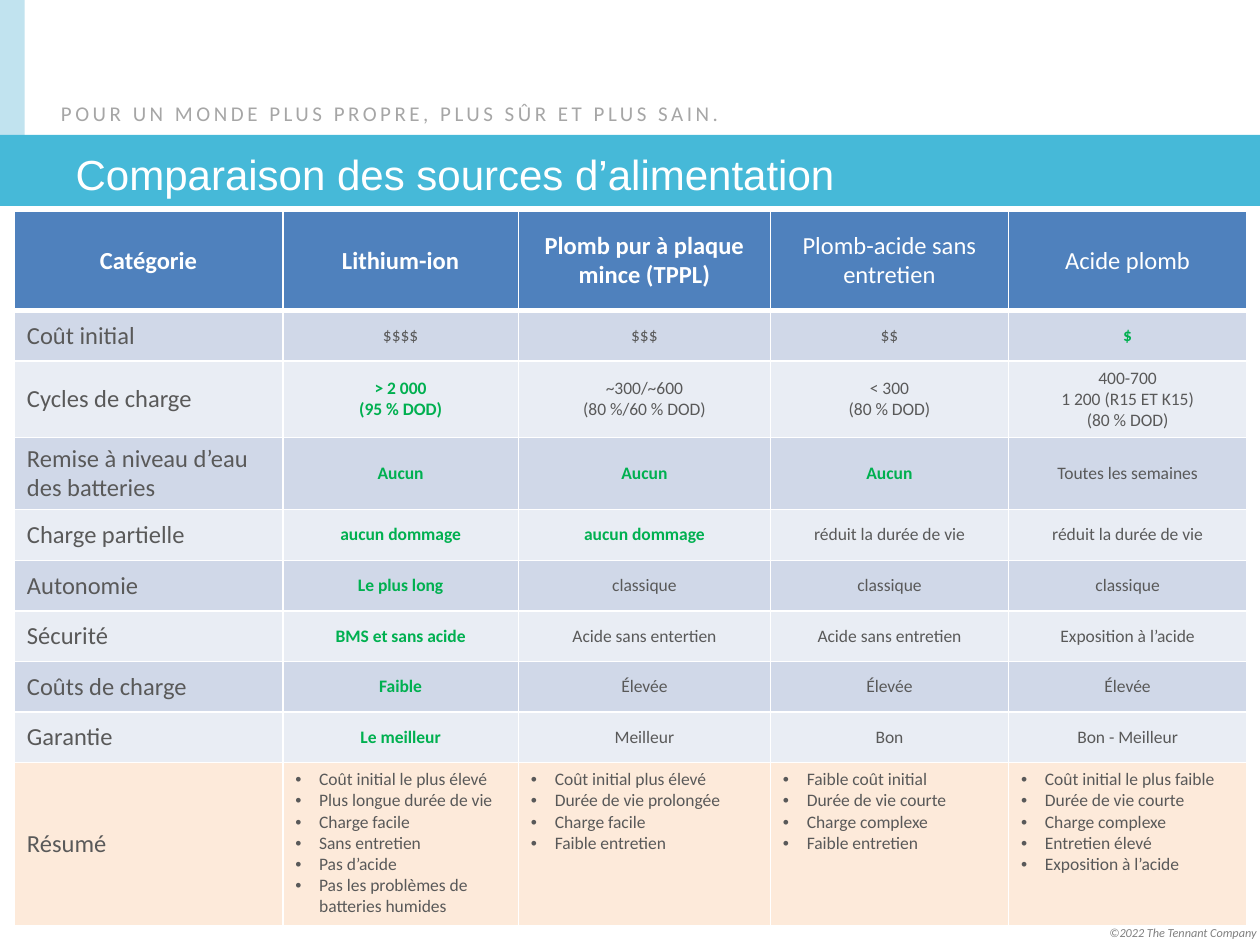
from lxml.etree import SubElement
from pptx import Presentation
from pptx.dml.color import RGBColor
from pptx.enum.shapes import MSO_SHAPE
from pptx.enum.text import MSO_ANCHOR, MSO_AUTO_SIZE, PP_ALIGN
from pptx.oxml.ns import qn
from pptx.util import Cm, Pt

WHITE, GREY, GREEN = "FFFFFF", "595959", "00B050"
BEST = "*"  # leading mark of a cell that holds the best value

COLUMNS = [5.41, 4.75, 5.08, 4.8, 4.8]
ROWS = [2.01, 1.02, 1.42] + [1.02] * 6 + [3.28]
HEADERS = ["Catégorie", "Lithium-ion", "Plomb pur à plaque mince (TPPL)",
           "Plomb-acide sans entretien", "Acide plomb"]
BOLD_HEADERS = 3
COMPARISON = [
    ["Coût initial", "$$$$", "$$$", "$$", "*$"],
    ["Cycles de charge", "*> 2 000\n(95 % DOD)", "~300/~600\n(80 %/60 % DOD)",
     "< 300\n(80 % DOD)", "400-700\n1 200 (R15 ET K15)\n(80 % DOD)"],
    ["Remise à niveau d’eau des batteries", "*Aucun", "*Aucun", "*Aucun",
     "Toutes les semaines"],
    ["Charge partielle", "*aucun dommage", "*aucun dommage",
     "réduit la durée de vie", "réduit la durée de vie"],
    ["Autonomie", "*Le plus long", "classique", "classique", "classique"],
    ["Sécurité", "*BMS et sans acide", "Acide sans entertien",
     "Acide sans entretien", "Exposition à l’acide"],
    ["Coûts de charge", "*Faible", "Élevée", "Élevée", "Élevée"],
    ["Garantie", "*Le meilleur", "Meilleur", "Bon", "Bon - Meilleur"],
]
SUMMARY = [
    ["Coût initial le plus élevé", "Plus longue durée de vie", "Charge facile",
     "Sans entretien", "Pas d’acide", "Pas les problèmes de batteries humides"],
    ["Coût initial plus élevé", "Durée de vie prolongée", "Charge facile",
     "Faible entretien"],
    ["Faible coût initial", "Durée de vie courte", "Charge complexe",
     "Faible entretien"],
    ["Coût initial le plus faible", "Durée de vie courte", "Charge complexe",
     "Entretien élevé", "Exposition à l’acide"],
]


def color(value):
    return RGBColor.from_string(value)


class Page:
    font = "Calibri"

    def __init__(self, deck):
        self.slide = deck.slides.add_slide(deck.slide_layouts[5])

    def add_lines(self, frame, lines, size, ink, bold=False, italic=False,
                  align=PP_ALIGN.LEFT, font=None, spacing=0, bullet=False):
        for number, line in enumerate(lines):
            para = frame.add_paragraph() if number else frame.paragraphs[0]
            para.alignment = align
            if bullet:
                self.add_bullet(para)
            span = para.add_run()
            span.text = line
            span.font.name = font or self.font
            span.font.size = Pt(size)
            span.font.bold = bold
            span.font.italic = italic
            span.font.color.rgb = color(ink)
            if spacing:
                span.font._element.set("spc", str(spacing * 100))

    def add_bullet(self, para):
        props = para._p.get_or_add_pPr()
        props.set("marL", str(Cm(0.48)))
        props.set("indent", str(-Cm(0.48)))
        SubElement(props, qn("a:buFont")).set("typeface", "Arial")
        SubElement(props, qn("a:buChar")).set("char", "•")

    def band(self, left, top, width, height, fill):
        box = self.slide.shapes.add_shape(
            MSO_SHAPE.RECTANGLE, Cm(left), Cm(top), Cm(width), Cm(height))
        box.shadow.inherit = False
        box.fill.solid()
        box.fill.fore_color.rgb = color(fill)
        box.line.fill.background()

    def label(self, left, top, width, height, text, size, ink, **style):
        box = self.slide.shapes.add_textbox(
            Cm(left), Cm(top), Cm(width), Cm(height))
        box.text_frame.word_wrap = True
        self.add_lines(box.text_frame, [text], size, ink, **style)

    def title(self, left, top, width, height, text):
        box = self.slide.shapes.title
        box.left, box.top, box.width, box.height = map(
            Cm, (left, top, width, height))
        frame = box.text_frame
        frame.auto_size = MSO_AUTO_SIZE.NONE
        frame.vertical_anchor = MSO_ANCHOR.MIDDLE
        self.add_lines(frame, [text], 24, WHITE, font="Arial")
        # Bring the title in front of the bands
        self.slide.shapes._spTree.append(box._element)

    def grid(self, left, top, columns, rows):
        table = self.slide.shapes.add_table(
            len(rows), len(columns), Cm(left), Cm(top),
            Cm(sum(columns)), Cm(sum(rows))).table
        for column, width in zip(table.columns, columns):
            column.width = Cm(width)
        for row, height in zip(table.rows, rows):
            row.height = Cm(height)
        return table

    def cell(self, cell, lines, fill, size, ink, top_line=1, bottom_line=1,
             anchor=MSO_ANCHOR.MIDDLE, **style):
        props = cell._tc.get_or_add_tcPr()
        for side, width in zip("LRTB", (1, 1, top_line, bottom_line)):
            line = SubElement(props, qn(f"a:ln{side}"), w=str(Pt(width)))
            paint = SubElement(line, qn("a:solidFill"))
            SubElement(paint, qn("a:srgbClr"), val=WHITE)
        cell.fill.solid()
        cell.fill.fore_color.rgb = color(fill)
        cell.vertical_anchor = anchor
        self.add_lines(cell.text_frame, lines, size, ink, **style)


def main():
    deck = Presentation()
    deck.slide_width, deck.slide_height = Cm(25.4), Cm(19.05)
    page = Page(deck)

    # Bands, tagline, copyright and title
    page.band(0, 0, 0.5, 3.38, "C1E3EF")
    page.band(0, 2.72, 25.4, 1.43, "46B9D8")
    page.label(0.98, 1.9, 14.2, 0.77,
               "POUR UN MONDE PLUS PROPRE, PLUS SÛR ET PLUS SAIN.",
               12, "A6A6A6", spacing=2)
    page.label(21.16, 18.52, 4.42, 0.55, "©2022 The Tennant Company",
               7, "808080", italic=True, align=PP_ALIGN.RIGHT)
    page.title(1.27, 2.75, 22.86, 1.5, "Comparaison des sources d’alimentation")

    # Header row
    table = page.grid(0.29, 4.25, COLUMNS, ROWS)
    for col, text in enumerate(HEADERS):
        page.cell(table.cell(0, col), [text], "4F81BD", 14, WHITE,
                  bottom_line=3, bold=col < BOLD_HEADERS,
                  align=PP_ALIGN.CENTER)

    # Comparison rows with alternating fills
    for row, (category, *values) in enumerate(COMPARISON, 1):
        fill = "D0D8E8" if row % 2 else "E9EDF4"
        top_line = 3 if row == 1 else 1
        page.cell(table.cell(row, 0), [category], fill, 14, GREY, top_line)
        for col, text in enumerate(values, 1):
            best = text.startswith(BEST)
            page.cell(table.cell(row, col), text.lstrip(BEST).split("\n"),
                      fill, 10, GREEN if best else GREY, top_line,
                      bold=best, align=PP_ALIGN.CENTER)

    # Summary row
    last = len(ROWS) - 1
    page.cell(table.cell(last, 0), ["Résumé"], "FDEADA", 14, GREY)
    for col, points in enumerate(SUMMARY, 1):
        page.cell(table.cell(last, col), points, "FDEADA", 10, GREY,
                  anchor=MSO_ANCHOR.TOP, bullet=True)

    deck.save("out.pptx")


if __name__ == "__main__":
    main()
